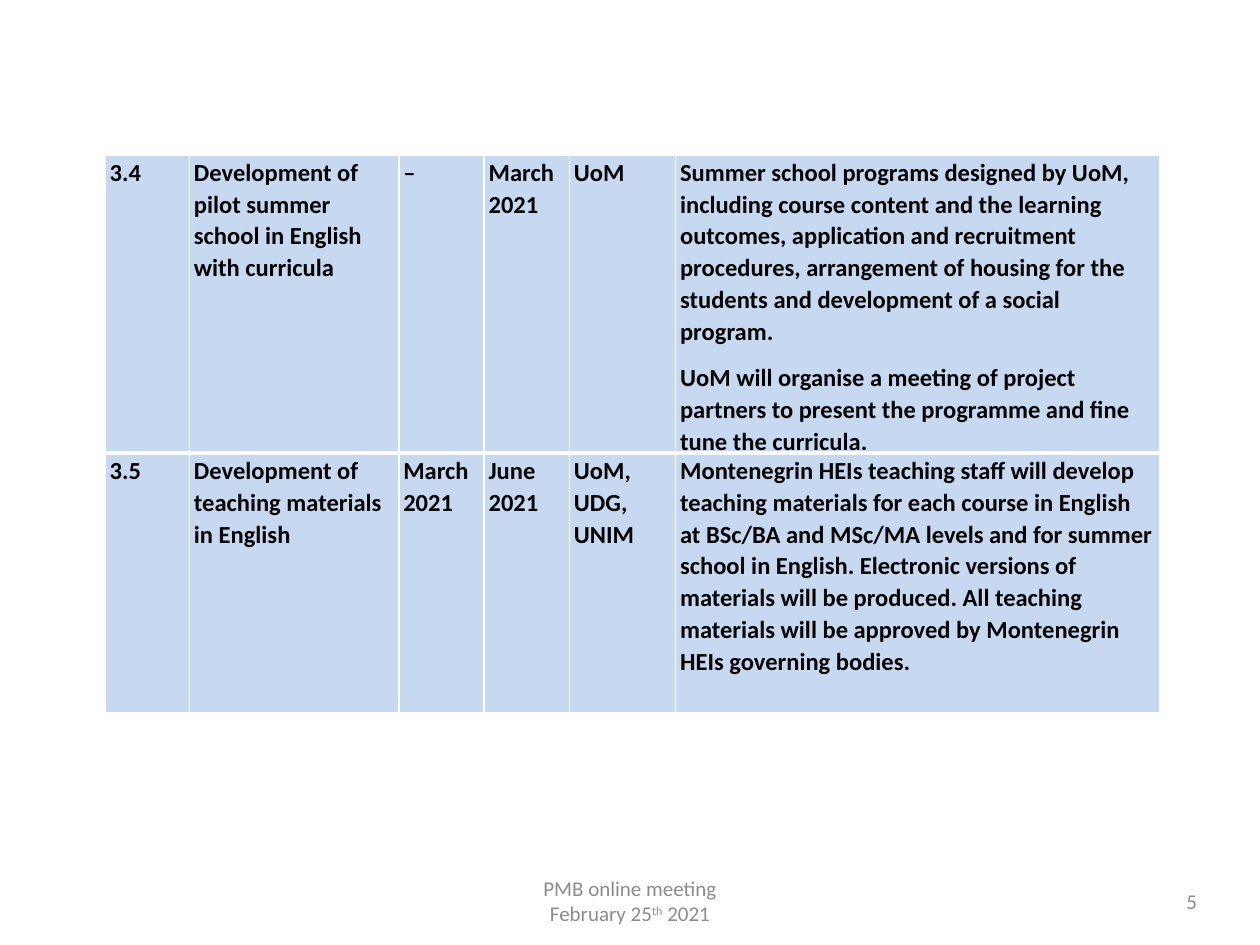
from pptx import Presentation
from pptx.util import Cm, Pt
from pptx.dml.color import RGBColor as RGB
from pptx.enum.text import PP_ALIGN as Align, MSO_ANCHOR as Anchor
from pptx.oxml.ns import qn
from lxml.etree import SubElement as Sub

BLACK = RGB(0, 0, 0)
WHITE = RGB(255, 255, 255)
GREY = RGB(0x8C, 0x8C, 0x8C)
BLUE = RGB(0xC6, 0xD9, 0xF1)

WIDTHS = [1.7, 4.22, 1.72, 1.72, 2.14, 9.75]
HEIGHTS = [5.28, 5.23]
TASKS = [
    ["3.4", "Development of pilot summer school in English with curricula",
     "–", "March 2021", "UoM",
     "Summer school programs designed by UoM, including course content and "
     "the learning outcomes, application and recruitment procedures, "
     "arrangement of housing for the students and development of a social "
     "program.\nUoM will organise a meeting of project partners to present "
     "the programme and fine tune the curricula."],
    ["3.5", "Development of teaching materials in English",
     "March 2021", "June 2021", "UoM, UDG, UNIM",
     "Montenegrin HEIs teaching staff will develop teaching materials for "
     "each course in English at BSc/BA and MSc/MA levels and for summer "
     "school in English. Electronic versions of materials will be produced. "
     "All teaching materials will be approved by Montenegrin HEIs governing "
     "bodies."],
]


def apply(item, vals):
    """Set each named value on the item."""
    for name, val in vals.items():
        setattr(item, name, val)


class Deck:
    """Holds the style and the current slide."""

    note = dict(name="Calibri", size=Pt(12))
    bold = dict(name="Calibri", size=Pt(14), bold=True)
    flow = dict(line_spacing=1.07, space_after=Pt(8))
    inset = dict(margin_left=Cm(0.09), margin_right=Cm(0.09),
                 margin_top=Cm(0.02), margin_bottom=0)

    def __init__(self, slide):
        self.slide = slide

    def text(self, box, lines, align, left=0):
        """Add a footer box whose lines are lists of (text, raise) runs."""
        shape = self.slide.shapes.add_textbox(*map(Cm, box))
        frame = shape.text_frame
        apply(frame, dict(word_wrap=True, vertical_anchor=Anchor.MIDDLE,
                          margin_left=Cm(left), margin_right=0,
                          margin_top=Cm(0.13), margin_bottom=Cm(0.13)))
        for i, line in enumerate(lines):
            para = frame.add_paragraph() if i else frame.paragraphs[0]
            para.alignment = align
            for words, lift in line:
                run = para.add_run()
                run.text = words
                apply(run.font, self.note)
                run.font.color.rgb = GREY
                if lift:
                    run.font._element.set("baseline", str(lift * 1000))

    def edge(self, cell, side, width):
        """Draw one white side of a cell."""
        line = Sub(cell._tc.get_or_add_tcPr(), qn(f"a:ln{side}"),
                   w=str(Pt(width)))
        Sub(Sub(line, qn("a:solidFill")), qn("a:srgbClr"), val=str(WHITE))

    def cell(self, cell, words, edges):
        """Fill, frame and write one cell."""
        for side, width in edges.items():
            self.edge(cell, side, width)
        cell.fill.solid()
        cell.fill.fore_color.rgb = BLUE
        apply(cell, self.inset)
        cell.text_frame.text = words
        for para in cell.text_frame.paragraphs:
            tabs = Sub(para._p.get_or_add_pPr(), qn("a:tabLst"))
            Sub(tabs, qn("a:tab"), pos=str(Cm(3.96)), algn="l")
            apply(para, self.flow)
            for run in para.runs:
                apply(run.font, self.bold)
                run.font.color.rgb = BLACK

    def table(self, box, rows, widths, heights):
        """Add a table with a thick rule between its two rows."""
        frame = self.slide.shapes.add_table(len(rows), len(widths),
                                            *map(Cm, box))
        grid = frame.table
        for col, width in zip(grid.columns, widths):
            col.width = Cm(width)
        for i, row in enumerate(rows):
            grid.rows[i].height = Cm(heights[i])
            edges = dict(L=1, R=1, T=3 if i else 1, B=1 if i else 3)
            for j, words in enumerate(row):
                self.cell(grid.cell(i, j), words, edges)
        frame.height = Cm(box[3])


def main():
    """Build the slide and save it."""
    show = Presentation()
    apply(show, dict(slide_width=Cm(25.4), slide_height=Cm(19.05)))
    deck = Deck(show.slides.add_slide(show.slide_layouts[6]))
    deck.text((5.3, 17.65, 14.8, 1.02),
              [[("PMB online meeting", 0)],
               [("February 25", 0), ("th", 30), (" 2021", 0)]], Align.CENTER)
    deck.text((20.3, 17.65, 3.83, 1.02), [[("5", 0)]], Align.RIGHT, 0.25)
    deck.table((2.12, 3.12, 21.21, 11.23), TASKS, WIDTHS, HEIGHTS)
    show.save("out.pptx")


if __name__ == "__main__":
    main()
